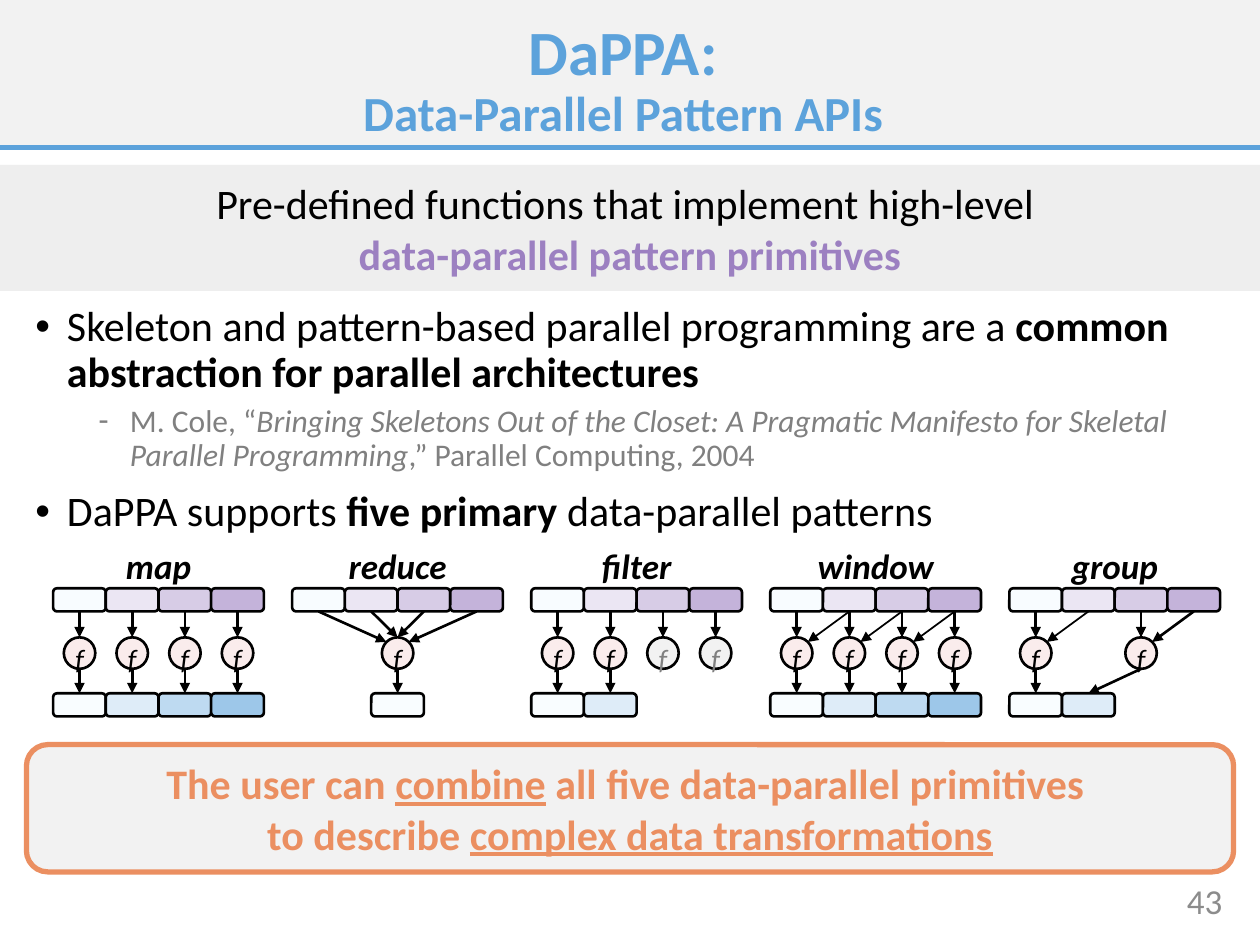
from lxml.etree import SubElement
from pptx import Presentation
from pptx.dml.color import RGBColor
from pptx.enum.shapes import MSO_CONNECTOR, MSO_SHAPE
from pptx.enum.text import MSO_ANCHOR, MSO_AUTO_SIZE, PP_ALIGN
from pptx.oxml.ns import qn
from pptx.util import Pt

BLACK = RGBColor(0x00, 0x00, 0x00)
GRAY = RGBColor(0x80, 0x80, 0x80)
NUMBER_GRAY = RGBColor(0x8C, 0x8C, 0x8C)
LIGHT_GRAY = RGBColor(0xF2, 0xF2, 0xF2)
BAND_GRAY = RGBColor(0xEE, 0xEE, 0xEE)
BLUE = RGBColor(0x5C, 0xA2, 0xDB)
PURPLE = RGBColor(0x9C, 0x80, 0xC1)
ORANGE = RGBColor(0xEB, 0x8F, 0x61)
PINK = RGBColor(0xFA, 0xEC, 0xEC)
INPUT_FILLS = [RGBColor(0xF8, 0xFC, 0xFF), RGBColor(0xEB, 0xE6, 0xF3),
               RGBColor(0xD7, 0xCC, 0xE6), RGBColor(0xC4, 0xB3, 0xDA)]
OUTPUT_FILLS = [RGBColor(0xF9, 0xFD, 0xFF), RGBColor(0xDE, 0xEC, 0xF8),
                RGBColor(0xBE, 0xDA, 0xF1), RGBColor(0x9D, 0xC7, 0xE9)]


def add_runs(paragraph, size, color, *runs):
    """Add (text, styles) runs, where styles holds b, i or u; None breaks the line."""
    for item in runs:
        if item is None:
            paragraph.add_line_break()
            continue
        text, styles = item
        run = paragraph.add_run()
        run.text = text
        run.font.name = "Calibri"
        run.font.size = Pt(size)
        run.font.color.rgb = color
        run.font.bold = "b" in styles
        run.font.italic = "i" in styles
        run.font.underline = "u" in styles


def add_box(shapes, kind, left, top, width, height, fill, line=None, line_width=1.5):
    """Add a filled shape with centred text and no shadow."""
    shape = shapes.add_shape(kind, Pt(left), Pt(top), Pt(width), Pt(height))
    shape.shadow.inherit = False
    shape.fill.solid()
    shape.fill.fore_color.rgb = fill
    if line is None:
        shape.line.fill.background()
    else:
        shape.line.color.rgb = line
        shape.line.width = Pt(line_width)
    shape.text_frame.vertical_anchor = MSO_ANCHOR.MIDDLE
    shape.text_frame.paragraphs[0].alignment = PP_ALIGN.CENTER
    return shape


presentation = Presentation()
presentation.slide_width = Pt(720)
presentation.slide_height = Pt(540)
slide = presentation.slides.add_slide(presentation.slide_layouts[5])
connectors = []  # (connector, color, width, has arrowhead)

# Header band behind the title
title = slide.shapes.title
header = add_box(slide.shapes, MSO_SHAPE.RECTANGLE, 0, 0, 720, 84.2, LIGHT_GRAY)
title.element.addprevious(header.element)
rule = slide.shapes.add_connector(MSO_CONNECTOR.STRAIGHT, Pt(0), Pt(84.2), Pt(720), Pt(84.2))
connectors.append((rule, BLUE, 3, False))

title.left, title.top, title.width, title.height = Pt(6), Pt(10), Pt(700), Pt(72.8)
title.text_frame.auto_size = MSO_AUTO_SIZE.NONE
title.text_frame.vertical_anchor = MSO_ANCHOR.MIDDLE
paragraph = title.text_frame.paragraphs[0]
paragraph.alignment = PP_ALIGN.CENTER
paragraph.line_spacing = 0.9
add_runs(paragraph, 36, BLUE, ("DaPPA:", "b"), None)
add_runs(paragraph, 28, BLUE, ("Data-Parallel Pattern APIs", "b"))

# Definition band
band = add_box(slide.shapes, MSO_SHAPE.RECTANGLE, 0, 94.3, 720, 72, BAND_GRAY)
paragraph = band.text_frame.paragraphs[0]
add_runs(paragraph, 24, BLACK,
         ("Pre-defined functions that implement high-level ", ""), None)
add_runs(paragraph, 24, PURPLE, ("data-parallel pattern primitives", "b"))

# Bullets: mark, left indent, space before, size, color, runs
bullets = [
    ("•", 18, 0, 24, BLACK,
     [("Skeleton and pattern-based parallel programming are a ", ""),
      ("common abstraction for parallel architectures", "b")]),
    ("-", 54, 5, 18, GRAY,
     [("M. Cole, “", ""),
      ("Bringing Skeletons Out of the Closet: A Pragmatic Manifesto for Skeletal "
       "Parallel Programming", "i"),
      (",” Parallel Computing, 2004", "")]),
    ("•", 18, 10, 24, BLACK,
     [("DaPPA supports ", ""), ("five primary ", "b"), ("data-parallel patterns", "")]),
]
body = slide.shapes.add_textbox(Pt(13.2), Pt(171), Pt(700), Pt(140))
body.text_frame.word_wrap = True
for index, (mark, indent, space, size, color, runs) in enumerate(bullets):
    paragraph = body.text_frame.paragraphs[0] if index == 0 else body.text_frame.add_paragraph()
    properties = paragraph._p.get_or_add_pPr()
    properties.set("marL", str(Pt(indent)))
    properties.set("indent", str(-Pt(18)))
    SubElement(properties, qn("a:buFont"), typeface="Arial")
    SubElement(properties, qn("a:buChar"), char=mark)
    paragraph.line_spacing = 0.9
    paragraph.space_before = Pt(space)
    add_runs(paragraph, size, color, *runs)

# Pattern diagrams
CELL, CELL_HEIGHT, CIRCLE = 30.1, 13.2, 18
FIRST_LEFT, PATTERN_STEP = 30.4, 136.6
INPUT_TOP, CIRCLE_TOP, OUTPUT_TOP = 336.2, 364.2, 396.2
DIAGONAL = 6.36  # offset of a circle's 45 degree point from its centre

# Name, circle columns, active circles, output columns,
# inputs as (cell, circle, side of circle: -1 left, 0 top, 1 right; width),
# outputs as (circle, output cell)
straight = [(column, column, 0, 1.5) for column in range(4)]
one_to_one = [(column, column) for column in range(4)]
patterns = [
    ("map", range(4), 4, range(4), straight, one_to_one),
    ("reduce", [1.5], 1, [1.5],
     [(0, 0, -1, 1.5), (1, 0, 0, 1.5), (2, 0, 0, 1.5), (3, 0, 1, 1.5)], [(0, 0)]),
    ("filter", range(4), 2, range(2), straight, one_to_one[:2]),
    ("window", range(4), 4, range(4),
     straight + [(column + 1, column, 1, 1) for column in range(3)], one_to_one),
    ("group", [0, 2], 2, range(2),
     [(0, 0, 0, 1.5), (1, 0, 1, 1), (2, 1, 0, 1.5), (3, 1, 1, 1.5)], [(0, 0), (1, 1)]),
]
for index, (name, columns, active, outputs, input_links, output_links) in enumerate(patterns):
    left = FIRST_LEFT + index * PATTERN_STEP
    shapes = slide.shapes.add_group_shape().shapes
    input_cells = [add_box(shapes, MSO_SHAPE.ROUNDED_RECTANGLE, left + column * CELL,
                           INPUT_TOP, CELL, CELL_HEIGHT, fill, BLACK)
                   for column, fill in enumerate(INPUT_FILLS)]
    output_cells = [add_box(shapes, MSO_SHAPE.ROUNDED_RECTANGLE, left + column * CELL,
                            OUTPUT_TOP, CELL, CELL_HEIGHT, fill, BLACK)
                    for column, fill in zip(outputs, OUTPUT_FILLS)]

    circles = []
    for number, column in enumerate(columns):
        fill, color = (PINK, BLACK) if number < active else (LIGHT_GRAY, GRAY)
        circle = add_box(shapes, MSO_SHAPE.OVAL, left + (column + 0.5) * CELL - CIRCLE / 2,
                         CIRCLE_TOP, CIRCLE, CIRCLE, fill, BLACK)
        frame = circle.text_frame
        frame.margin_left = frame.margin_right = frame.margin_top = frame.margin_bottom = 0
        frame.vertical_anchor = MSO_ANCHOR.TOP
        add_runs(frame.paragraphs[0], 16, color, ("f", "i"))
        circles.append(circle)

    for cell, number, side, width in input_links:
        start, circle = input_cells[cell], circles[number]
        end_x = circle.left + circle.width // 2 + Pt(side * DIAGONAL)
        end_y = circle.top + (Pt(CIRCLE / 2 - DIAGONAL) if side else 0)
        arrow = shapes.add_connector(MSO_CONNECTOR.STRAIGHT, start.left + start.width // 2,
                                     start.top + start.height, end_x, end_y)
        arrow.begin_connect(start, 2)
        if side == 0:
            arrow.end_connect(circle, 0)
        connectors.append((arrow, BLACK, width, True))

    for number, cell in output_links:
        circle, end = circles[number], output_cells[cell]
        arrow = shapes.add_connector(MSO_CONNECTOR.STRAIGHT, circle.left + circle.width // 2,
                                     circle.top + circle.height,
                                     end.left + end.width // 2, end.top)
        arrow.end_connect(end, 0)
        connectors.append((arrow, BLACK, 1.5, True))

    label = shapes.add_textbox(Pt(left), Pt(314.6), Pt(4 * CELL), Pt(16.6))
    label.text_frame.word_wrap = True
    label.text_frame.vertical_anchor = MSO_ANCHOR.MIDDLE
    label.text_frame.paragraphs[0].alignment = PP_ALIGN.CENTER
    add_runs(label.text_frame.paragraphs[0], 20, BLACK, (name, "bi"))

# Takeaway box
takeaway = add_box(slide.shapes, MSO_SHAPE.ROUNDED_RECTANGLE, 15.1, 425.5, 689.8, 72.7,
                   LIGHT_GRAY, ORANGE, 3)
add_runs(takeaway.text_frame.paragraphs[0], 24, ORANGE,
         ("The user can ", "b"), ("combine", "bu"),
         (" all five data-parallel primitives ", "b"), None,
         ("to describe ", "b"), ("complex data transformations", "bu"))

# Slide number
number_box = slide.shapes.add_textbox(Pt(627.8), Pt(500.4), Pt(77.8), Pt(28.8))
number_box.text_frame.vertical_anchor = MSO_ANCHOR.MIDDLE
number_box.text_frame.word_wrap = True
number_box.text_frame.paragraphs[0].alignment = PP_ALIGN.RIGHT
add_runs(number_box.text_frame.paragraphs[0], 20, NUMBER_GRAY, ("43", ""))

# Line styles
for connector, color, width, has_arrowhead in connectors:
    connector.line.color.rgb = color
    connector.line.width = Pt(width)
    properties = connector.element.spPr
    if has_arrowhead:
        SubElement(properties.find(qn("a:ln")), qn("a:tailEnd"), type="triangle")
    SubElement(properties, qn("a:effectLst"))

presentation.save("out.pptx")
